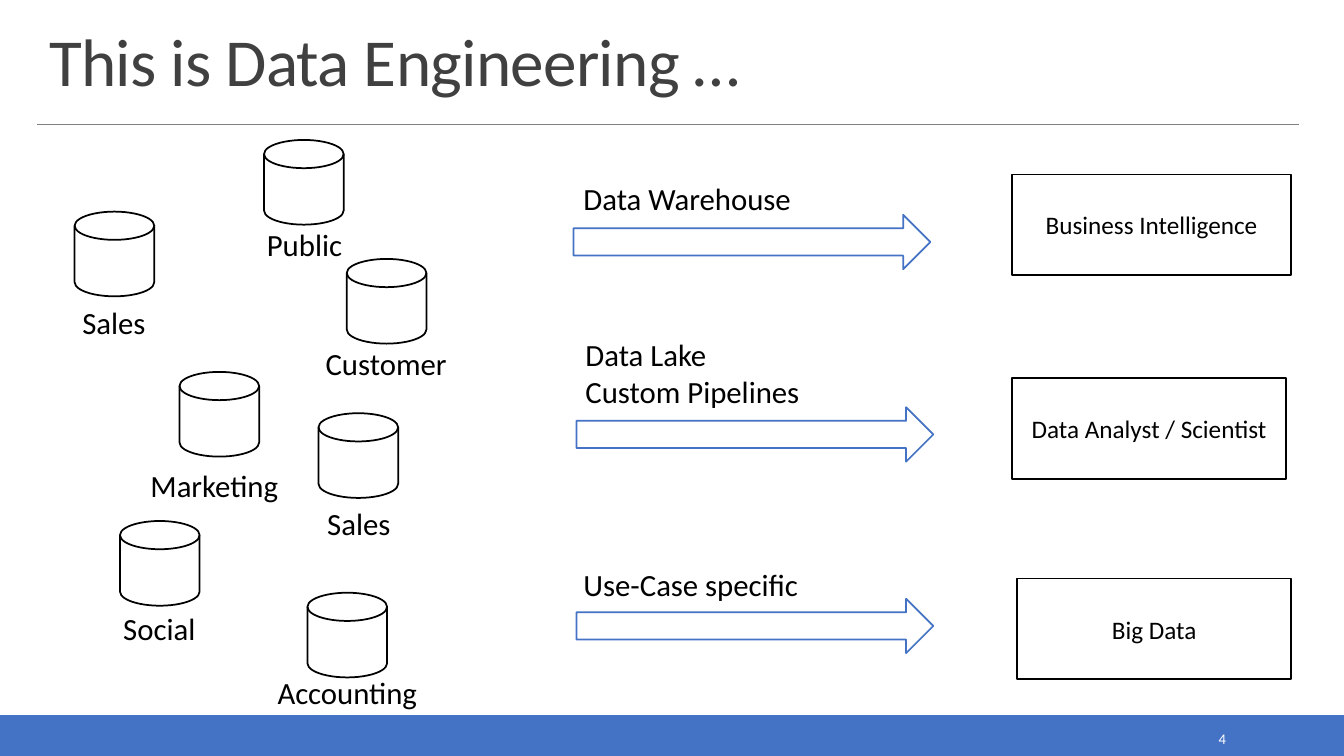
from dataclasses import dataclass

from lxml.etree import SubElement
from pptx import Presentation
from pptx.dml.color import RGBColor as RGB
from pptx.enum.shapes import MSO_CONNECTOR as Conn, MSO_SHAPE as Shape
from pptx.enum.text import MSO_ANCHOR as Anchor, MSO_AUTO_SIZE as Fit, PP_ALIGN as Align
from pptx.oxml.ns import qn
from pptx.util import Pt


@dataclass(frozen=True)
class Theme:
    font: str = "Calibri"
    blue: RGB = RGB(0x44, 0x72, 0xC4)
    black: RGB = RGB(0, 0, 0)
    white: RGB = RGB(255, 255, 255)
    dark: RGB = RGB(0x40, 0x40, 0x40)
    gray: RGB = RGB(0x80, 0x80, 0x80)
    head: float = 48
    label: float = 22
    body: float = 18
    small: float = 10.5
    edge: float = 1.25
    thin: float = 0.5


def write(frame, text, font, size, color, align=Align.LEFT, anchor=Anchor.TOP,
          lead=None, track=None):
    """Fill a text frame with one paragraph; newlines become line breaks."""
    frame.word_wrap = True
    frame.vertical_anchor = anchor
    para = frame.paragraphs[0]
    para.text = text
    para.alignment = align
    if lead:
        para.line_spacing = lead
    for run in para.runs:
        run.font.name = font
        run.font.size = Pt(size)
        run.font.color.rgb = color
        if track:
            run.font._element.set("spc", str(round(track * 100)))


class Board:
    def __init__(self, slide, theme):
        self.slide = slide
        self.theme = theme

    def title(self, text, x, y, w, h):
        t = self.theme
        head = self.slide.shapes.title
        head.left, head.top, head.width, head.height = map(Pt, (x, y, w, h))
        head.text_frame.auto_size = Fit.NONE
        write(head.text_frame, text, t.font, t.head, t.dark,
              anchor=Anchor.BOTTOM, lead=0.85, track=-0.5)

    def rule(self, x, y, end):
        line = self.slide.shapes.add_connector(Conn.STRAIGHT, Pt(x), Pt(y), Pt(end), Pt(y))
        line.line.color.rgb = self.theme.gray
        line.line.width = Pt(self.theme.thin)
        SubElement(line._element.spPr, qn("a:effectLst"))

    def shape(self, kind, x, y, w, h, edge, fill=None):
        item = self.slide.shapes.add_shape(kind, Pt(x), Pt(y), Pt(w), Pt(h))
        item.shadow.inherit = False
        if fill is None:
            item.fill.background()
        else:
            item.fill.solid()
            item.fill.fore_color.rgb = fill
        item.line.color.rgb = edge
        item.line.width = Pt(self.theme.edge)
        return item

    def box(self, text, x, y, w, h):
        t = self.theme
        item = self.shape(Shape.RECTANGLE, x, y, w, h, t.black, t.white)
        write(item.text_frame, text, t.font, t.body, t.black, Align.CENTER, Anchor.MIDDLE)

    def note(self, text, x, y, w, h, align=Align.LEFT):
        t = self.theme
        item = self.slide.shapes.add_textbox(Pt(x), Pt(y), Pt(w), Pt(h))
        write(item.text_frame, text, t.font, t.label, t.black, align)
        item.text_frame.auto_size = Fit.SHAPE_TO_FIT_TEXT

    def page(self, text, x, y, w, h):
        t = self.theme
        item = self.slide.shapes.add_textbox(Pt(x), Pt(y), Pt(w), Pt(h))
        write(item.text_frame, text, t.font, t.small, t.white, Align.RIGHT, Anchor.MIDDLE)

    def disk(self, x, y):
        self.shape(Shape.FLOWCHART_MAGNETIC_DISK, x, y, 56.9, 60.5, self.theme.black)

    def arrow(self, x, y):
        self.shape(Shape.RIGHT_ARROW, x, y, 254.9, 38.9, self.theme.blue)


# name, disk left and top, label left, top and width
STORES = [
    ("Public", 188.6, 100, 164.2, 157.7, 106.6),
    ("Sales", 53.3, 151.2, 38.9, 213.1, 85),
    ("Customer", 247.7, 185, 222.5, 242.6, 106.6),
    ("Marketing", 128.2, 265.7, 95.8, 329.8, 114.5),
    ("Sales", 227.5, 295.2, 213.8, 357.1, 85),
    ("Social", 85.7, 372.2, 60.5, 432, 106.6),
    ("Accounting", 219.6, 423.4, 190.8, 477.4, 114.5),
]

# label, its left, top and height, arrow left and top
FLOWS = [
    ("Data Warehouse", 409.7, 124.6, 33.8, 409.7, 153.4),
    ("Data Lake\nCustom Pipelines", 411.1, 236.2, 60.5, 411.8, 290.9),
    ("Use-Case specific", 409.7, 400.3, 33.8, 411.8, 427.7),
]

# text, box left, top and width
USES = [
    ("Business Intelligence", 722.9, 124.6, 199.4),
    ("Data Analyst / Scientist", 722.9, 270, 195.8),
    ("Big Data", 726.5, 413.3, 195.8),
]


def main():
    deck = Presentation()
    deck.slide_width, deck.slide_height = Pt(960), Pt(540)
    theme = Theme()
    board = Board(deck.slides.add_slide(deck.slide_layouts[5]), theme)

    board.shape(Shape.RECTANGLE, 0, 511.2, 960, 28.8, theme.blue, theme.blue)
    board.rule(26.6, 88.6, 928)
    board.title("This is Data Engineering …", 28.1, 14.4, 901.4, 60.5)
    board.page("4", 779.8, 517.7, 103, 20.2)

    for text, x, y, high, left, top in FLOWS:
        board.arrow(left, top)
        board.note(text, x, y, 217.4, high)
    for text, x, y, wide in USES:
        board.box(text, x, y, wide, 72)
    for name, x, y, left, top, wide in STORES:
        board.disk(x, y)
        board.note(name, left, top, wide, 33.8, Align.CENTER)

    deck.save("out.pptx")


if __name__ == "__main__":
    main()
